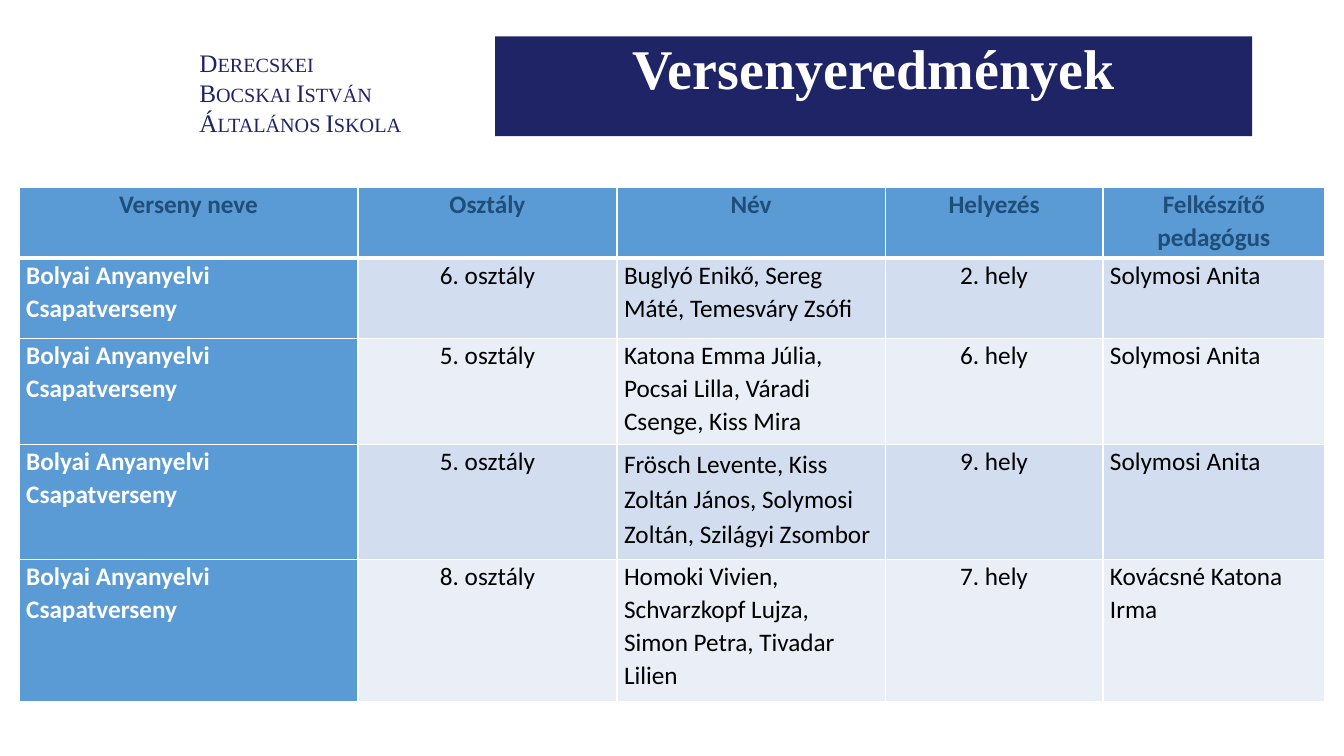
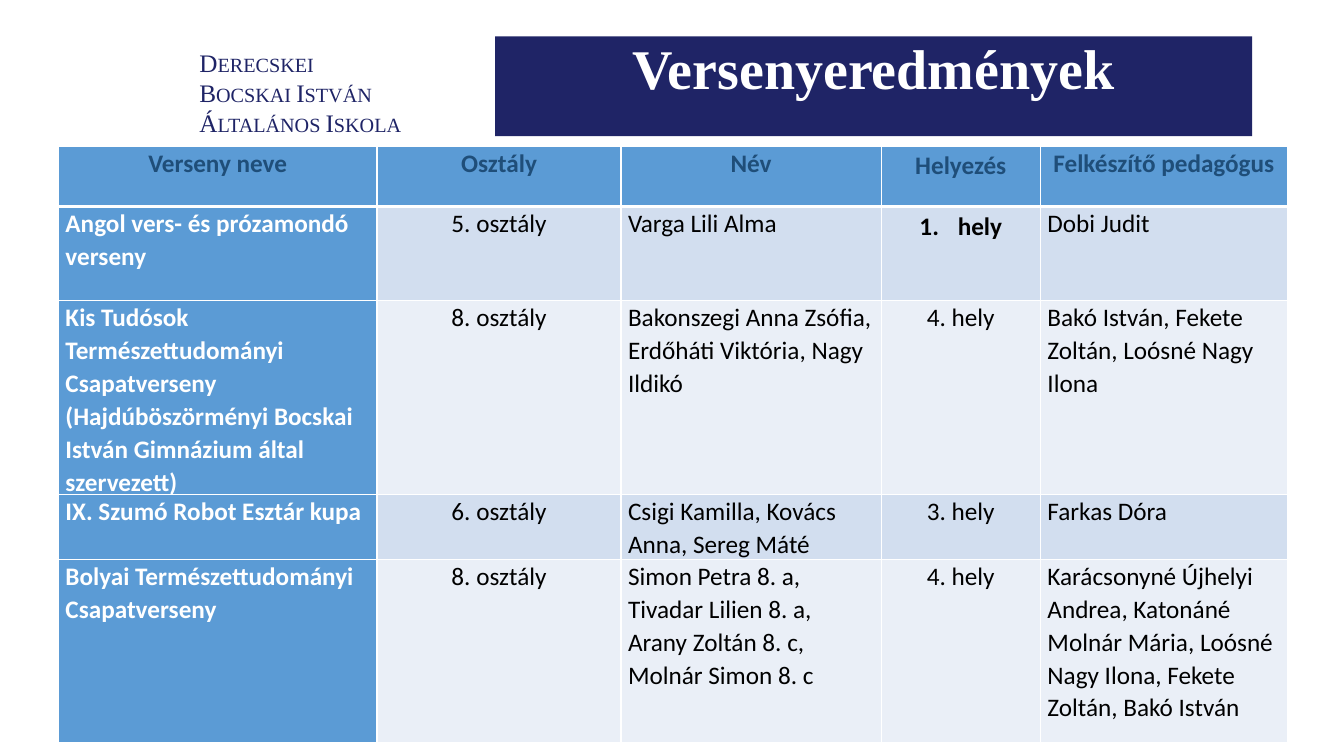
from pptx import Presentation
from pptx import util as u
from pptx.dml.color import RGBColor
from pptx.enum import text as t
from pptx.oxml import parse_xml
from pptx.oxml.ns import nsdecls

COLORS = {
    "navy": "1F2466",
    "white": "FFFFFF",
    "black": "000000",
    "header_text": "1F4E79",
    "blue": "5B9BD5",
    "band_dark": "D2DEEF",
    "band_light": "EAEFF7",
}
SERIF, SANS = "Times New Roman", "Calibri"
SCHOOL = "Derecskei\vBocskai István\vÁltalános Iskola"
HEADINGS = ["Verseny neve", "Osztály", "Név", "Helyezés", "Felkészítő pedagógus"]
CENTERED_COLUMNS = (1, 3)


def write(frame, text, font=SANS, size=18, color="black", bold=False, center=False,
          spacing=None, before=None, small_caps=False, numbered=False):
    """Fill a text frame; a newline starts a paragraph, a vertical tab breaks a line."""
    frame.text = text
    for paragraph in frame.paragraphs:
        paragraph.alignment = t.PP_ALIGN.CENTER if center else t.PP_ALIGN.LEFT
        if spacing:
            paragraph.line_spacing = spacing
        if before:
            paragraph.space_before = u.Pt(before)
        if numbered:
            props = paragraph._p.get_or_add_pPr()
            props.set("marL", str(u.Inches(0.38)))
            props.set("indent", str(-u.Inches(0.38)))
            props.append(parse_xml(f'<a:buAutoNum {nsdecls("a")} type="arabicPeriod"/>'))
        for run in paragraph.runs:
            run.font.name = font
            run.font.size = u.Pt(size)
            run.font.bold = bold
            run.font.color.rgb = RGBColor.from_string(COLORS[color])
            if small_caps:
                run._r.get_or_add_rPr().set("cap", "small")


class Deck:
    def __init__(self):
        self.prs = Presentation()
        self.prs.slide_width, self.prs.slide_height = u.Inches(13.33), u.Inches(7.5)
        self.slide = None

    def new_slide(self, title):
        self.slide = self.prs.slides.add_slide(self.prs.slide_layouts[5])
        self.school_name()
        self.title_band(title)

    def school_name(self):
        box = self.slide.shapes.add_textbox(
            u.Inches(1.88), u.Inches(0.42), u.Inches(3), u.Inches(1.31))
        box.text_frame.word_wrap = True
        write(box.text_frame, SCHOOL, font=SERIF, color="navy", small_caps=True)

    def title_band(self, title):
        band = self.slide.shapes.title
        band.left, band.top = u.Inches(4.91), u.Inches(0.36)
        band.width, band.height = u.Inches(7.51), u.Inches(0.99)
        self.fill(band, "navy")
        frame = band.text_frame
        frame.auto_size = t.MSO_AUTO_SIZE.NONE
        frame.vertical_anchor = t.MSO_ANCHOR.TOP
        write(frame, title, font=SERIF, size=40, color="white", bold=True,
              center=True, spacing=0.9, before=10)

    def fill(self, target, color):
        target.fill.solid()
        target.fill.fore_color.rgb = RGBColor.from_string(COLORS[color])

    def borders(self, cell, row):
        # The rule below the header is thicker than the rest
        widths = {"L": 1, "R": 1, "T": 3 if row == 1 else 1, "B": 3 if row == 0 else 1}
        props = cell._tc.get_or_add_tcPr()
        for side, width in widths.items():
            props.append(parse_xml(
                f'<a:ln{side} {nsdecls("a")} w="{u.Pt(width)}"><a:solidFill>'
                f'<a:srgbClr val="{COLORS["white"]}"/></a:solidFill></a:ln{side}>'))

    def results_table(self, left, top, widths, heights, results, special):
        """Draw the results; special maps (row, column) to extra text formats."""
        rows = [HEADINGS, *results]
        table = self.slide.shapes.add_table(
            len(rows), len(widths), u.Inches(left), u.Inches(top),
            u.Inches(sum(widths)), u.Inches(sum(heights))).table
        for column, width in zip(table.columns, widths):
            column.width = u.Inches(width)
        for r, (entries, height) in enumerate(zip(rows, heights)):
            table.rows[r].height = u.Inches(height)
            for c, entry in enumerate(entries):
                self.result_cell(table.cell(r, c), r, c, entry, special.get((r, c), {}))

    def result_cell(self, cell, row, col, entry, extra):
        heading, contest = row == 0, col == 0
        self.borders(cell, row)
        band = "band_dark" if row % 2 else "band_light"
        self.fill(cell, "blue" if heading or contest else band)
        cell.margin_left = cell.margin_right = u.Inches(0.07)
        cell.margin_top = cell.margin_bottom = 0
        style = dict(
            color="header_text" if heading else "white" if contest else "black",
            bold=heading or contest,
            center=heading or col in CENTERED_COLUMNS,
            spacing=1.07)
        write(cell.text_frame, entry, **{**style, **extra})


def main():
    deck = Deck()

    # Language team contest
    language_contest = "Bolyai Anyanyelvi Csapatverseny"
    deck.new_slide("Versenyeredmények")
    deck.results_table(
        0.19, 1.86, [3.36, 2.57, 2.66, 2.16, 2.2], [0.7, 0.8, 1.05, 1.14, 1.41],
        [
            [language_contest, "6. osztály", "Buglyó Enikő, Sereg Máté, Temesváry Zsófi",
             "2. hely", "Solymosi Anita"],
            [language_contest, "5. osztály",
             "Katona Emma Júlia, Pocsai Lilla, Váradi Csenge, Kiss Mira",
             "6. hely", "Solymosi Anita"],
            [language_contest, "5. osztály",
             "Frösch Levente, Kiss Zoltán János, Solymosi Zoltán, Szilágyi Zsombor",
             "9. hely", "Solymosi Anita"],
            [language_contest, "8. osztály",
             "Homoki Vivien, Schvarzkopf Lujza, Simon Petra, Tivadar Lilien",
             "7. hely", "Kovácsné Katona Irma"],
        ],
        {(3, 2): dict(spacing=1.15)})

    # English, science and robot contests
    deck.new_slide("Versenyeredmények")
    deck.results_table(
        0.58, 1.45, [3.16, 2.42, 2.58, 1.58, 2.45], [0.6, 0.93, 1.86, 0.62, 1.82],
        [
            ["Angol vers- és prózamondó verseny", "5. osztály", "Varga Lili Alma",
             "hely", "Dobi Judit"],
            ["Kis Tudósok Természettudományi Csapatverseny\n"
             "(Hajdúböszörményi Bocskai István Gimnázium által szervezett)",
             "8. osztály", "Bakonszegi Anna Zsófia, Erdőháti Viktória, Nagy Ildikó",
             "4. hely", "Bakó István, Fekete Zoltán, Loósné Nagy Ilona"],
            ["IX. Szumó Robot Esztár kupa", "6. osztály",
             "Csigi Kamilla, Kovács Anna, Sereg Máté", "3. hely", "Farkas Dóra"],
            ["Bolyai Természettudományi Csapatverseny", "8. osztály",
             "Simon Petra 8. a, Tivadar Lilien 8. a, Arany Zoltán 8. c, Molnár Simon 8. c",
             "4. hely",
             "Karácsonyné Újhelyi Andrea, Katonáné Molnár Mária, Loósné Nagy Ilona, "
             "Fekete Zoltán, Bakó István"],
        ],
        {(0, 3): dict(spacing=1.15),
         (1, 3): dict(spacing=1.15, bold=True, numbered=True)})

    deck.prs.save("out.pptx")


if __name__ == "__main__":
    main()
